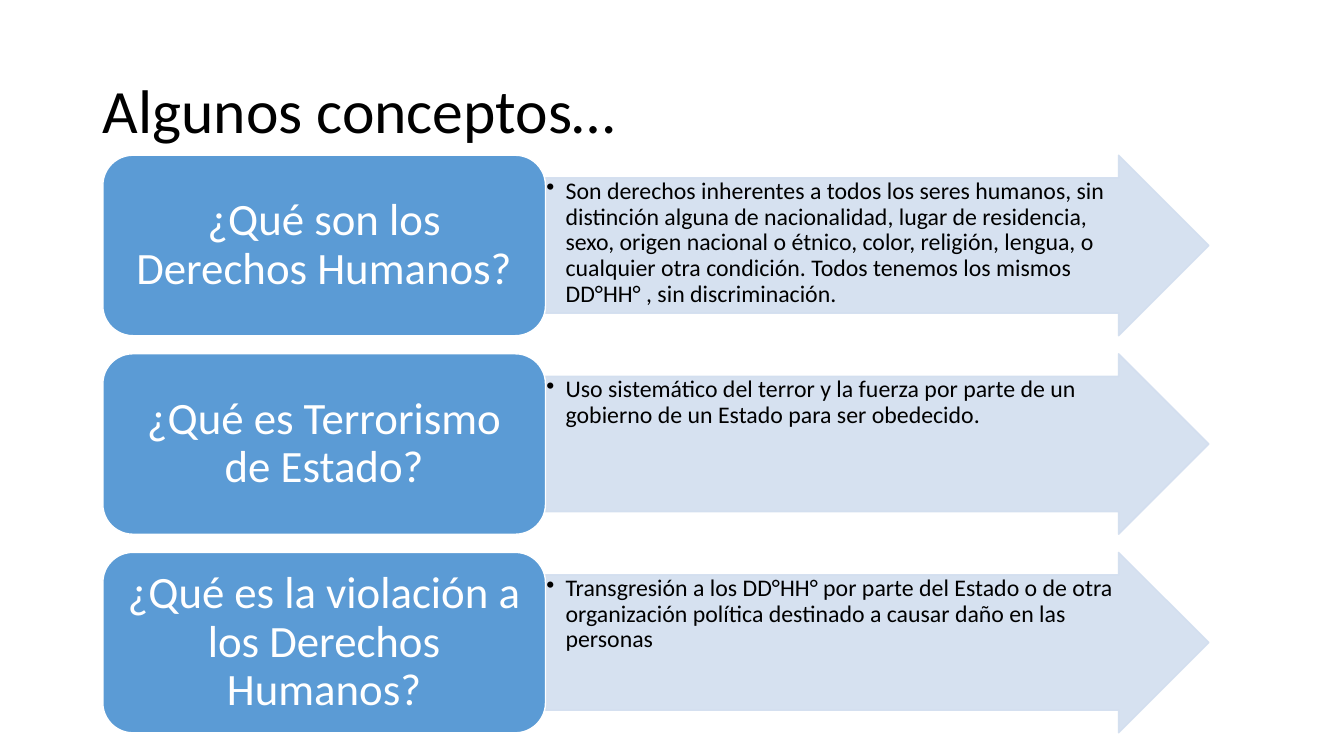
import dataclasses

import lxml.etree
import pptx
import pptx.dml.color
import pptx.enum.shapes
import pptx.enum.text
import pptx.oxml.ns
import pptx.util
from pptx.util import Inches


@dataclasses.dataclass(frozen=True)
class Theme:
    """Colours, typeface and type sizes of the slide."""
    font: str = "Calibri"
    ink: str = "000000"
    paper: str = "FFFFFF"
    question_fill: str = "5B9BD5"
    answer_fill: str = "D2DEEF"
    answer_opacity: int = 90
    title_size: int = 44
    question_size: int = 32
    answer_size: int = 17


THEME = Theme()
SLIDE_WIDTH, SLIDE_HEIGHT = 13.33, 7.5
QUESTION_LEFT, QUESTION_WIDTH = 1.02, 4.39
ANSWER_LEFT, ANSWER_WIDTH = QUESTION_LEFT + QUESTION_WIDTH, 6.58
FIRST_ROW, ROW_HEIGHT, ROW_PITCH = 1.54, 1.79, 1.97

CONCEPTS = [
    ("¿Qué son los Derechos Humanos?",
     "Son derechos inherentes a todos los seres humanos, sin distinción alguna de "
     "nacionalidad, lugar de residencia, sexo, origen nacional o étnico, color, religión, "
     "lengua, o cualquier otra condición. Todos tenemos los mismos DD°HH° , sin discriminación."),
    ("¿Qué es Terrorismo de Estado?",
     "Uso sistemático del terror y la fuerza por parte de un gobierno de un Estado para "
     "ser obedecido."),
    ("¿Qué es la violación a los Derechos Humanos?",
     "Transgresión a los DD°HH° por parte del Estado o de otra organización política "
     "destinado a causar daño en las personas"),
]


def rgb(colour):
    """Return a colour object for a hex string."""
    return pptx.dml.color.RGBColor.from_string(colour)


def set_opacity(panel, percent):
    """Make the fill and outline of a shape partly transparent."""
    properties = panel.element.spPr
    for colour in list(properties.iter(pptx.oxml.ns.qn("a:srgbClr"))):
        alpha = lxml.etree.SubElement(colour, pptx.oxml.ns.qn("a:alpha"))
        alpha.set("val", str(percent * 1000))


def set_bullet(paragraph, indent):
    """Give a paragraph a round bullet with a hanging indent."""
    properties = paragraph._p.get_or_add_pPr()
    properties.set("marL", str(Inches(indent)))
    properties.set("indent", str(Inches(-indent)))
    bullet = lxml.etree.SubElement(properties, pptx.oxml.ns.qn("a:buChar"))
    bullet.set("char", "•")


def write(frame, text, size, colour, align, anchor, margins):
    """Write one paragraph into a text frame and return it."""
    frame.word_wrap = True
    frame.vertical_anchor = anchor
    frame.margin_left = frame.margin_right = Inches(margins[0])
    frame.margin_top = frame.margin_bottom = Inches(margins[1])
    paragraph = frame.paragraphs[0]
    paragraph.alignment = align
    paragraph.line_spacing = 0.9
    run = paragraph.add_run()
    run.text = text
    run.font.name = THEME.font
    run.font.size = pptx.util.Pt(size)
    run.font.color.rgb = rgb(colour)
    return paragraph


def add_panel(slide, preset, left, top, width, fill, line):
    """Add a filled and outlined shape one row high."""
    panel = slide.shapes.add_shape(
        preset, Inches(left), Inches(top), Inches(width), Inches(ROW_HEIGHT))
    panel.shadow.inherit = False
    panel.fill.solid()
    panel.fill.fore_color.rgb = rgb(fill)
    panel.line.color.rgb = rgb(line)
    panel.line.width = pptx.util.Pt(1)
    return panel


def add_title(slide, text):
    """Add the slide heading."""
    heading = slide.shapes.add_textbox(
        Inches(0.92), Inches(0.4), Inches(11.5), Inches(1.45))
    write(heading.text_frame, text, THEME.title_size, THEME.ink,
          pptx.enum.text.PP_ALIGN.LEFT, pptx.enum.text.MSO_ANCHOR.MIDDLE, (0.1, 0.05))


def add_answer(slide, top, text):
    """Add the pale arrow that holds a definition."""
    arrow = add_panel(slide, pptx.enum.shapes.MSO_SHAPE.RIGHT_ARROW, ANSWER_LEFT, top,
                      ANSWER_WIDTH, THEME.answer_fill, THEME.answer_fill)
    arrow.adjustments[0] = 0.75
    arrow.adjustments[1] = 0.5
    set_opacity(arrow, THEME.answer_opacity)
    definition = write(arrow.text_frame, text, THEME.answer_size, THEME.ink,
                       pptx.enum.text.PP_ALIGN.LEFT, pptx.enum.text.MSO_ANCHOR.TOP,
                       (0.01, 0.01))
    set_bullet(definition, 0.19)


def add_question(slide, top, text):
    """Add the blue rounded box that holds a question."""
    box = add_panel(slide, pptx.enum.shapes.MSO_SHAPE.ROUNDED_RECTANGLE, QUESTION_LEFT, top,
                    QUESTION_WIDTH, THEME.question_fill, THEME.paper)
    write(box.text_frame, text, THEME.question_size, THEME.paper,
          pptx.enum.text.PP_ALIGN.CENTER, pptx.enum.text.MSO_ANCHOR.MIDDLE, (0.13, 0.07))


def main():
    """Build the slide and save it."""
    deck = pptx.Presentation()
    deck.slide_width, deck.slide_height = Inches(SLIDE_WIDTH), Inches(SLIDE_HEIGHT)
    slide = deck.slides.add_slide(deck.slide_layouts[6])
    add_title(slide, "Algunos conceptos…")
    for row, (question, answer) in enumerate(CONCEPTS):
        top = FIRST_ROW + row * ROW_PITCH
        add_answer(slide, top, answer)
        add_question(slide, top, question)
    deck.save("out.pptx")


if __name__ == "__main__":
    main()
